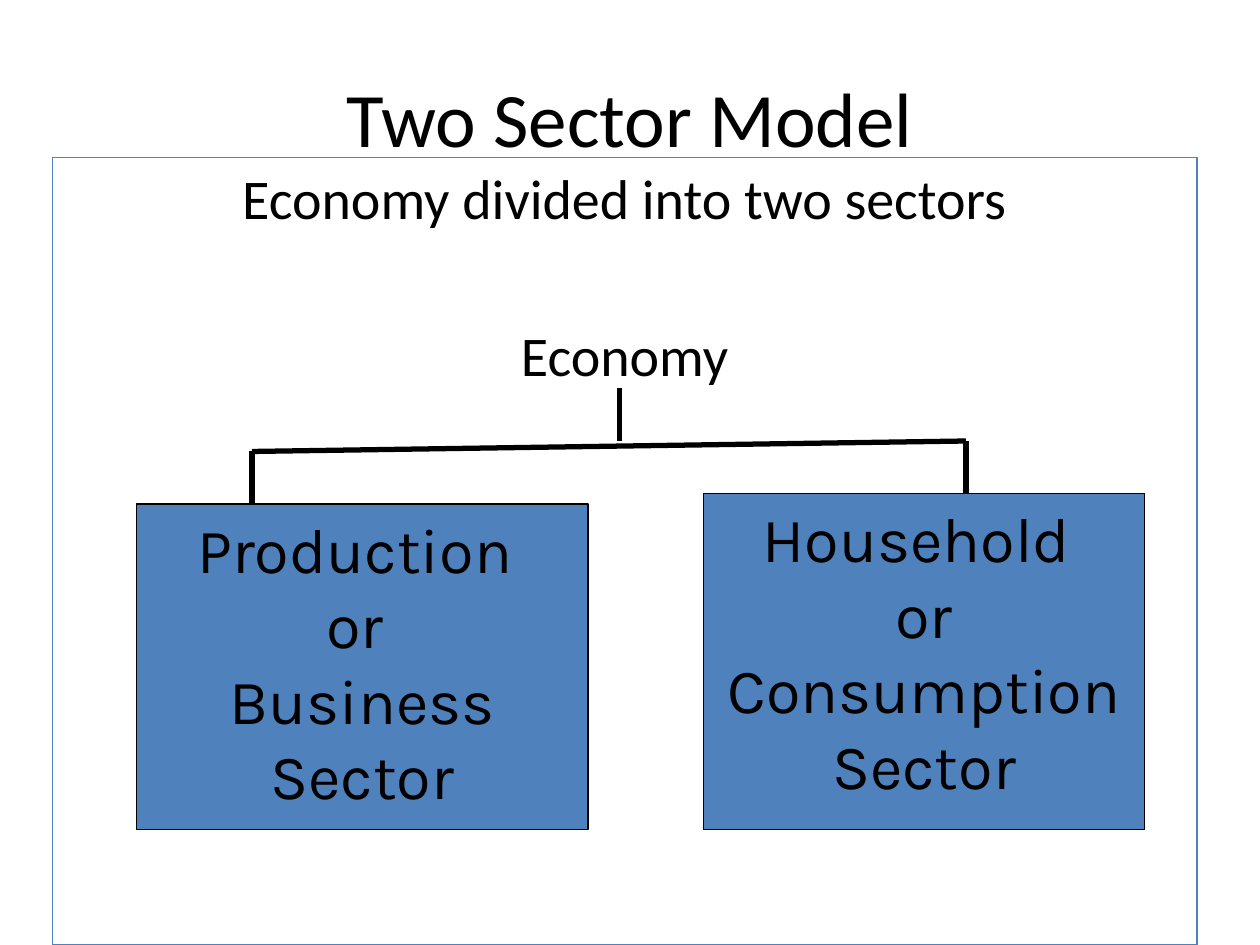
import dataclasses
import typing

import lxml.etree
import pptx
import pptx.dml.color
import pptx.enum.shapes
import pptx.enum.text
import pptx.oxml.ns
import pptx.util

Pt = pptx.util.Pt
RGB = pptx.dml.color.RGBColor
ANCHOR = pptx.enum.text.MSO_ANCHOR


@dataclasses.dataclass(frozen=True)
class Theme:
    black: RGB = RGB.from_string("000000")
    blue: RGB = RGB.from_string("4F81BD")
    heading_font: str = "Calibri"
    sector_font: str = "Karla"
    title_size: float = 44
    body_size: float = 32
    sector_size: float = 36
    outline: float = 0.75
    branch: float = 3


THEME = Theme()


class Line(typing.NamedTuple):
    text: str
    before: float = 0


@dataclasses.dataclass(frozen=True)
class Box:
    left: float
    top: float
    width: float
    height: float
    lines: tuple[Line, ...]
    size: float
    font: str = THEME.heading_font
    fill: RGB | None = None
    line: RGB | None = None
    anchor: ANCHOR = ANCHOR.TOP


class Branch(typing.NamedTuple):
    x1: float
    y1: float
    x2: float
    y2: float


LEFT_X, STEM_X, RIGHT_X = 144, 354, 552
LEFT_Y, RIGHT_Y, DROP = 258, 252, 30

BOXES = (
    Box(36, 21.6, 648, 90, (Line("Two Sector Model"),),
        THEME.title_size, anchor=ANCHOR.MIDDLE),
    Box(30, 90, 654, 450,
        (Line("Economy divided into two sectors", 2), Line("Economy", 51)),
        THEME.body_size, line=THEME.blue),
    Box(78, LEFT_Y + DROP, 258, 186,
        (Line("Production "), Line("or "), Line("Business Sector")),
        THEME.sector_size, THEME.sector_font, THEME.blue, THEME.black),
    Box(402, RIGHT_Y + DROP, 252, 192,
        (Line("Household "), Line("or Consumption Sector")),
        THEME.sector_size, THEME.sector_font, THEME.blue, THEME.black),
)

BRANCHES = (
    Branch(STEM_X, RIGHT_Y - DROP, STEM_X, RIGHT_Y),
    Branch(LEFT_X, LEFT_Y, RIGHT_X, RIGHT_Y),
    Branch(RIGHT_X, RIGHT_Y, RIGHT_X, RIGHT_Y + DROP),
    Branch(LEFT_X, LEFT_Y, LEFT_X, LEFT_Y + DROP),
)


def apply(target: typing.Any, values: dict[str, typing.Any]) -> None:
    for name, value in values.items():
        setattr(target, name, value)


def draw_box(s: typing.Any, box: Box) -> None:
    frame = [Pt(v) for v in (box.left, box.top, box.width, box.height)]
    if box.line is None:
        sp = s.shapes.add_textbox(*frame)
    else:
        sp = s.shapes.add_shape(pptx.enum.shapes.MSO_SHAPE.RECTANGLE, *frame)
        sp.shadow.inherit = False
        sp.line.color.rgb = box.line
        sp.line.width = Pt(THEME.outline)
        if box.fill is None:
            sp.fill.background()
        else:
            sp.fill.solid()
            sp.fill.fore_color.rgb = box.fill
    tf = sp.text_frame
    apply(tf, {"word_wrap": True, "vertical_anchor": box.anchor})
    for i, line in enumerate(box.lines):
        p = tf.add_paragraph() if i else tf.paragraphs[0]
        apply(p, {"alignment": pptx.enum.text.PP_ALIGN.CENTER,
                  "space_before": Pt(line.before)})
        r = p.add_run()
        r.text = line.text
        apply(r.font, {"name": box.font, "size": Pt(box.size)})
        r.font.color.rgb = THEME.black


def draw_branch(s: typing.Any, branch: Branch) -> None:
    sp = s.shapes.add_connector(
        pptx.enum.shapes.MSO_CONNECTOR.STRAIGHT, *(Pt(v) for v in branch))
    sp.line.color.rgb = THEME.black
    sp.line.width = Pt(THEME.branch)
    lxml.etree.SubElement(sp._element.spPr, pptx.oxml.ns.qn("a:effectLst"))


def main() -> None:
    prs = pptx.Presentation()
    apply(prs, {"slide_width": Pt(720), "slide_height": Pt(540)})
    s = prs.slides.add_slide(prs.slide_layouts[6])
    for box in BOXES:
        draw_box(s, box)
    for branch in BRANCHES:
        draw_branch(s, branch)
    prs.save("out.pptx")


if __name__ == "__main__":
    main()
